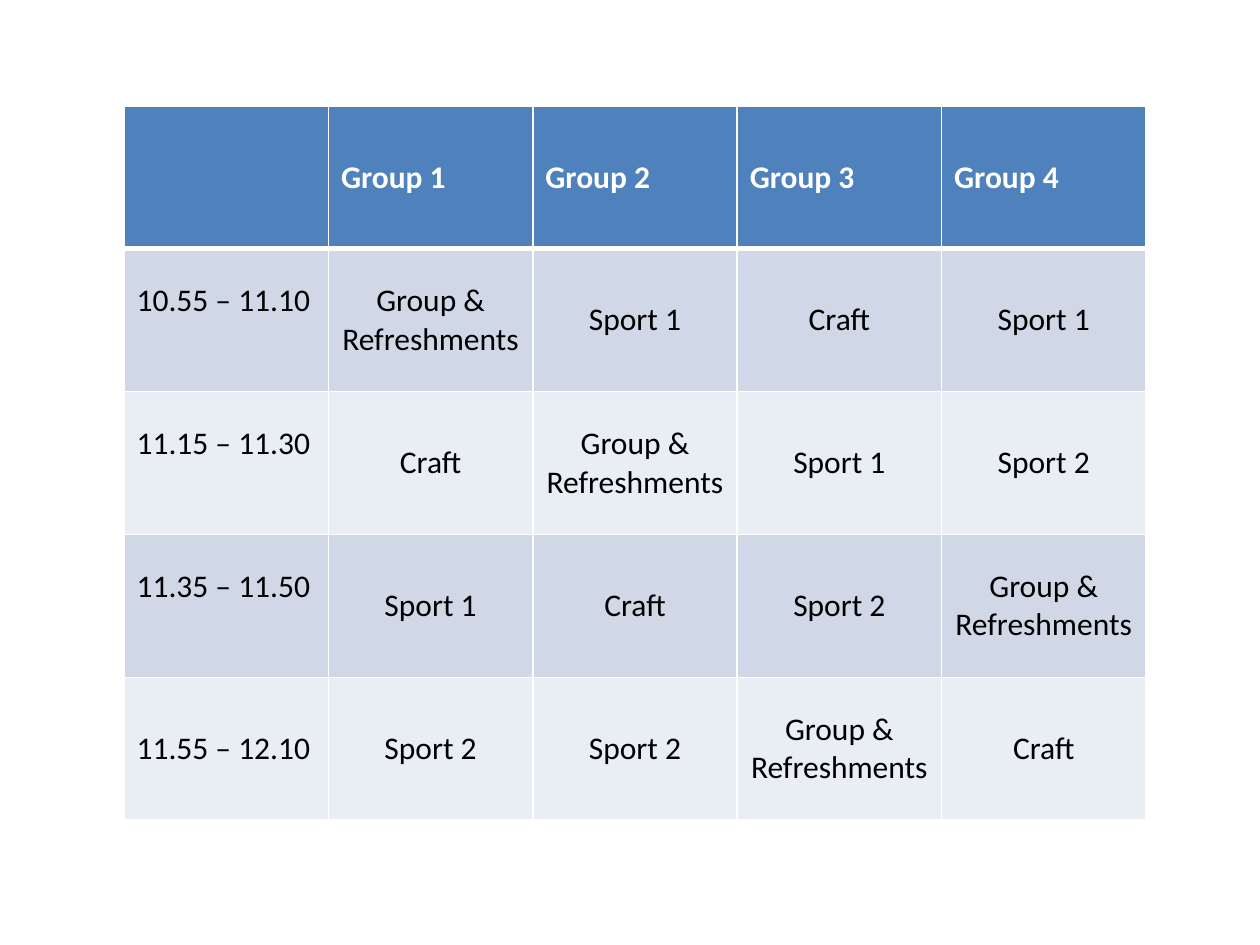
from pptx import Presentation
from pptx.dml.color import RGBColor
from pptx.enum.text import MSO_ANCHOR, PP_ALIGN
from pptx.oxml.ns import qn
from pptx.util import Pt
from lxml import etree

LEFT, MID = PP_ALIGN.LEFT, PP_ALIGN.CENTER
FONT = "Calibri"
HEX = {
    "head": "4F81BD",
    "dark": "D0D8E8",
    "light": "E9EDF4",
    "white": "FFFFFF",
    "black": "000000",
}
COL_W, ROW_H = 116.8, 81.65
BREAK = "Group & Refreshments"
ROWS = [
    ["", "Group 1", "Group 2", "Group 3", "Group 4"],
    ["10.55 – 11.10", BREAK, "Sport 1", "Craft", "Sport 1"],
    ["11.15 – 11.30", "Craft", BREAK, "Sport 1", "Sport 2"],
    ["11.35 – 11.50", "Sport 1", "Craft", "Sport 2", BREAK],
    ["11.55 – 12.10", "Sport 2", "Sport 2", BREAK, "Craft"],
]


def color(name):
    return RGBColor.from_string(HEX[name])


def write(cell, text, tint="black", bold=False, align=LEFT, size=18):
    cell.vertical_anchor = MSO_ANCHOR.MIDDLE
    para = cell.text_frame.paragraphs[0]
    para.alignment = align
    font = para.font
    if text:
        run = para.add_run()
        run.text = text
        font = run.font
    font.name, font.size, font.bold = FONT, Pt(size), bold
    font.color.rgb = color(tint)


def edge(cell, top=1, bottom=1):
    props = cell._tc.get_or_add_tcPr()
    for side, width in (("L", 1), ("R", 1), ("T", top), ("B", bottom)):
        line = etree.SubElement(props, qn("a:ln" + side), w=str(Pt(width)))
        fill = etree.SubElement(line, qn("a:solidFill"))
        etree.SubElement(fill, qn("a:srgbClr"), val=HEX["white"])


def paint(cell, name):
    cell.fill.solid()
    cell.fill.fore_color.rgb = color(name)


def add_plan(slide):
    count, width = len(ROWS), len(ROWS[0])
    table = slide.shapes.add_table(
        count, width, Pt(70.9), Pt(60.5), Pt(COL_W * width), Pt(ROW_H * count)
    ).table
    for col in table.columns:
        col.width = Pt(COL_W)
    for r, row in enumerate(ROWS):
        table.rows[r].height = Pt(ROW_H)
        for c, text in enumerate(row):
            cell = table.cell(r, c)
            # Borders come before the fill in the cell's XML
            edge(cell, top=3 if r == 1 else 1, bottom=3 if r == 0 else 1)
            if r == 0:
                paint(cell, "head")
                write(cell, text, tint="white", bold=True)
            else:
                paint(cell, "dark" if r % 2 else "light")
                write(cell, text, align=MID if c else LEFT)
    # All times but the last sit half a line above the middle
    for r in range(1, count - 1):
        table.cell(r, 0).margin_bottom = Pt(25.6)


def main():
    deck = Presentation()
    deck.slide_width, deck.slide_height = Pt(720), Pt(540)
    blank = deck.slide_layouts[6]
    add_plan(deck.slides.add_slide(blank))
    deck.save("out.pptx")


if __name__ == "__main__":
    main()
